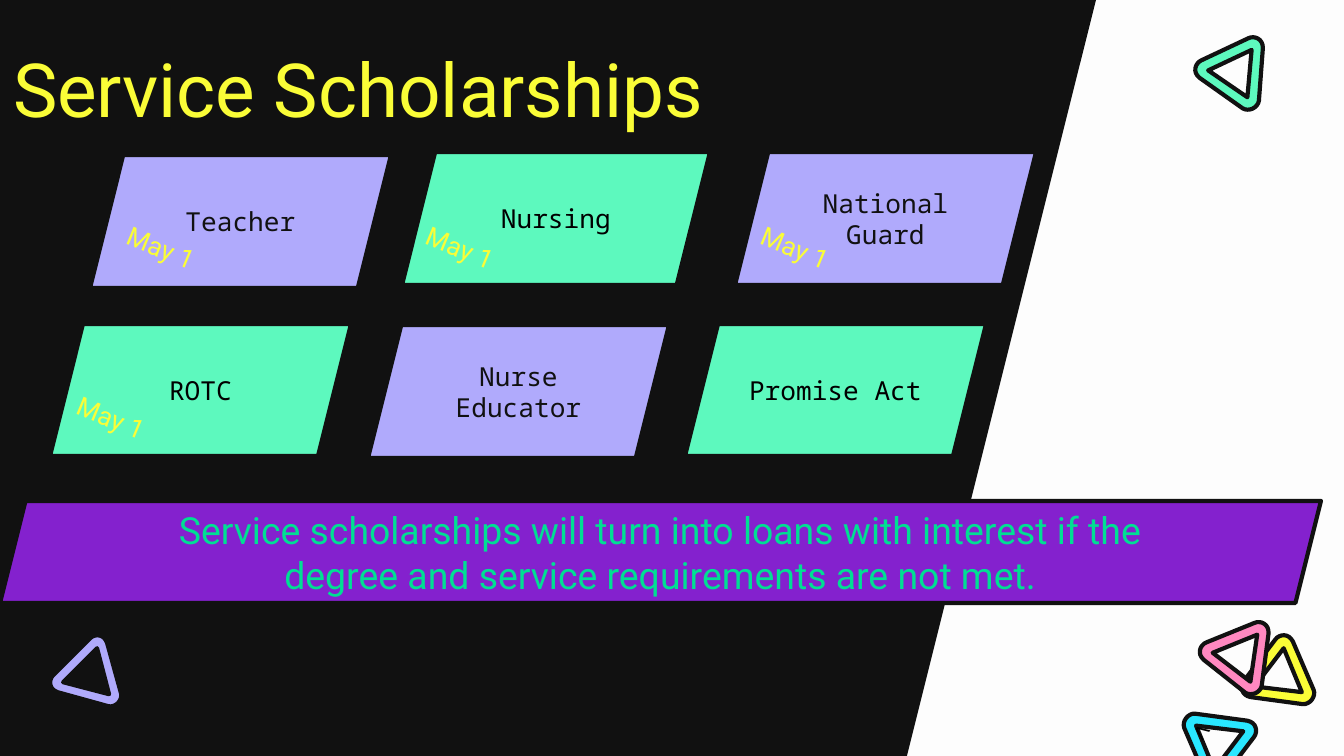
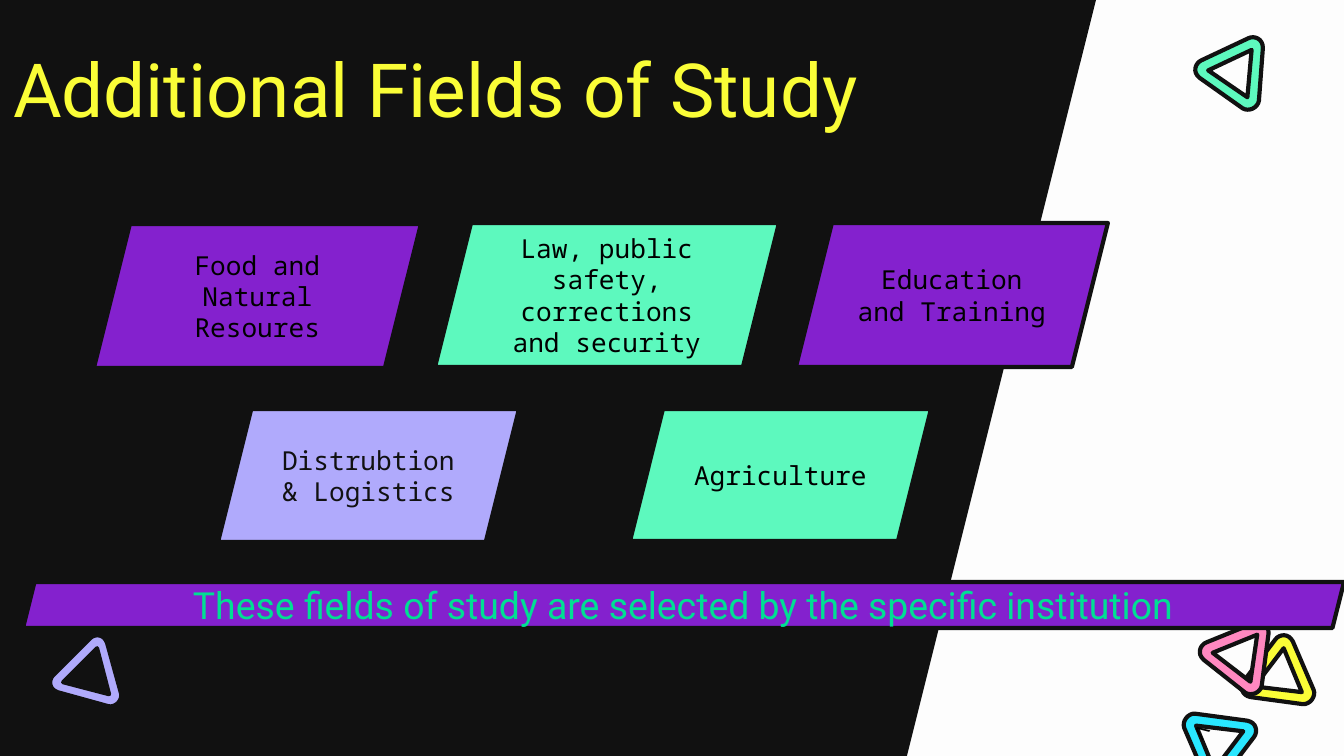
import dataclasses

import lxml.etree
import pptx
import pptx.dml.color
import pptx.enum.shapes
import pptx.enum.text
import pptx.oxml.ns
import pptx.presentation
import pptx.shapes.autoshape
import pptx.slide
import pptx.util

RGBColor = pptx.dml.color.RGBColor
Align = pptx.enum.text.PP_ALIGN
Anchor = pptx.enum.text.MSO_ANCHOR
Preset = pptx.enum.shapes.MSO_SHAPE
Point = tuple[float, float]

PX_PER_INCH = 134.4
WIDTH, HEIGHT = 1344, 756
INSET = 13
TITLE_ONLY = 5

WHITE = RGBColor(0xFD, 0xFD, 0xFD)
INK = RGBColor(0x11, 0x11, 0x11)
BLACK = RGBColor(0x00, 0x00, 0x00)
YELLOW = RGBColor(0xFA, 0xFD, 0x37)
MINT = RGBColor(0x5D, 0xF9, 0xBE)
LAVENDER = RGBColor(0xB0, 0xAA, 0xFC)
PURPLE = RGBColor(0x84, 0x21, 0xCE)
CYAN = RGBColor(0x29, 0xE7, 0xFF)
PINK = RGBColor(0xFF, 0x88, 0xC0)
GREEN = RGBColor(0x00, 0xDF, 0x93)

HEADING_FONT, CARD_FONT = "Roboto", "Noto Sans Mono"


@dataclasses.dataclass(frozen=True)
class Box:
    left: int
    top: int
    width: int
    height: int


@dataclasses.dataclass(frozen=True)
class Card:
    text: str
    box: Box
    fill: RGBColor


@dataclasses.dataclass(frozen=True)
class Triangle:
    center: tuple[int, int]
    rotation: float
    fill: RGBColor
    facing: int = 1
    text: str = ""


@dataclasses.dataclass(frozen=True)
class Page:
    title: str
    cards: list[Card]
    banner: Card
    deadlines: list[tuple[int, int]]


TITLE_BOX = Box(0, 46, 1470, 83)

TRIANGLES = [
    Triangle((1286, 680), 37.2, YELLOW),
    Triangle((1212, 738), 37.2, CYAN, facing=-1, text="<"),
    Triangle((1243, 663), 67.9, PINK),
    Triangle((1239, 79), 64.8, MINT),
    Triangle((95, 680), 45, LAVENDER),
]

# Rounded corners of a triangle pointing right, as cubic curves about its centre
CORNERS = [
    [(-33, 26), (-33, 33), (-26, 39), (-18, 35)],
    [(28, 9), (34, 5), (34, -5), (28, -9)],
    [(-18, -35), (-26, -39), (-33, -33), (-33, -26)],
]
HOLE = [(-21, -24), (20, 0), (-21, 24)]
CURVE_STEPS = 8

PAGES = [
    Page(
        "Service Scholarships",
        [
            Card("Teacher", Box(90, 155, 301, 133), LAVENDER),
            Card("Nursing", Box(402, 152, 308, 133), MINT),
            Card("National Guard", Box(735, 152, 301, 133), LAVENDER),
            Card("ROTC", Box(50, 324, 301, 132), MINT),
            Card("Nurse Educator", Box(368, 325, 301, 133), LAVENDER),
            Card("Promise Act", Box(685, 324, 301, 132), MINT),
        ],
        Card(
            "Service scholarships will turn into loans with interest if the "
            "degree and service requirements are not met.",
            Box(0, 501, 1321, 102),
            PURPLE,
        ),
        [(85, 224), (384, 224), (719, 224), (35, 394)],
    ),
    Page(
        "Additional Fields of Study",
        [
            Card("Food and Natural Resoures", Box(94, 224, 327, 144), PURPLE),
            Card("Law, public safety, corrections and security", Box(435, 223, 344, 144), MINT),
            Card("Education and Training", Box(796, 223, 312, 144), PURPLE),
            Card("Distrubtion & Logistics", Box(218, 409, 301, 133), LAVENDER),
            Card("Agriculture", Box(630, 409, 301, 132), MINT),
        ],
        Card(
            "These fields of study are selected by the specific institution",
            Box(23, 582, 1321, 46),
            PURPLE,
        ),
        [],
    ),
]


def px(length: float) -> pptx.util.Emu:
    return pptx.util.Emu(round(length * 914400 / PX_PER_INCH))


def bounds(box: Box) -> list[pptx.util.Emu]:
    return [px(length) for length in dataclasses.astuple(box)]


def paint(shape: pptx.shapes.autoshape.Shape, fill: RGBColor, outlined: bool = True) -> None:
    shape.shadow.inherit = False
    shape.fill.solid()
    shape.fill.fore_color.rgb = fill
    if outlined:
        shape.line.color.rgb = INK
        shape.line.width = pptx.util.Pt(2.25)
    else:
        shape.line.fill.background()


def write(
    shape: pptx.shapes.autoshape.Shape,
    text: str,
    size: int,
    font_name: str,
    color: RGBColor,
    align: Align = Align.CENTER,
) -> None:
    """Fill a shape with one vertically centred paragraph."""
    frame = shape.text_frame
    frame.text = text
    frame.word_wrap = True
    frame.auto_size = pptx.enum.text.MSO_AUTO_SIZE.NONE
    frame.vertical_anchor = Anchor.MIDDLE
    frame.margin_left = frame.margin_right = px(INSET)
    frame.margin_top = frame.margin_bottom = px(INSET)
    paragraph = frame.paragraphs[0]
    paragraph.alignment = align
    font = paragraph.runs[0].font
    font.size = pptx.util.Pt(size)
    font.name = font_name
    font.color.rgb = color


def curve_points(controls: list[Point]) -> list[Point]:
    points = []
    for step in range(CURVE_STEPS + 1):
        t = step / CURVE_STEPS
        weights = [(1 - t) ** 3, 3 * t * (1 - t) ** 2, 3 * t**2 * (1 - t), t**3]
        x, y = (sum(w * c[axis] for w, c in zip(weights, controls)) for axis in (0, 1))
        points.append((x, y))
    return points


def add_triangle(slide: pptx.slide.Slide, triangle: Triangle) -> pptx.shapes.autoshape.Shape:
    rim = [point for corner in CORNERS for point in curve_points(corner)]
    outer, inner = (
        [(px(triangle.facing * x), px(triangle.facing * y)) for x, y in outline]
        for outline in (rim, HOLE)
    )
    builder = slide.shapes.build_freeform(*outer[0], scale=1.0)
    builder.add_line_segments(outer[1:], close=True)
    builder.move_to(*inner[0])
    builder.add_line_segments(inner[1:], close=True)
    shape = builder.convert_to_shape(*(px(value) for value in triangle.center))
    shape.rotation = triangle.rotation
    paint(shape, triangle.fill)
    if triangle.text:
        write(shape, triangle.text, 14, "Arial", BLACK, Align.LEFT)
    return shape


def add_parallelogram(
    slide: pptx.slide.Slide, box: Box, fill: RGBColor, outlined: bool = True
) -> pptx.shapes.autoshape.Shape:
    shape = slide.shapes.add_shape(Preset.PARALLELOGRAM, *bounds(box))
    shape.adjustments[0] = 0.25
    paint(shape, fill, outlined)
    return shape


def decorate_layout(layout: pptx.slide.SlideLayout, slide: pptx.slide.Slide) -> None:
    """Draw the shared backdrop on a slide and move it to the layout."""
    layout.background.fill.solid()
    layout.background.fill.fore_color.rgb = WHITE
    for placeholder in list(layout.placeholders)[1:]:
        layout.shapes.element.remove(placeholder.element)
    slant = add_parallelogram(slide, Box(296, -4, 801, 769), INK, outlined=False)
    panel = slide.shapes.add_shape(Preset.RECTANGLE, *bounds(Box(-9, -4, 519, 770)))
    paint(panel, INK, outlined=False)
    triangles = [add_triangle(slide, triangle) for triangle in TRIANGLES]
    for shape in [slant, panel, *triangles]:
        layout.shapes.element.append(shape.element)


def add_title(slide: pptx.slide.Slide, text: str) -> None:
    title = slide.shapes.title
    title.left, title.top, title.width, title.height = bounds(TITLE_BOX)
    write(title, text, 40, HEADING_FONT, YELLOW, Align.LEFT)


def add_card(slide: pptx.slide.Slide, card: Card) -> None:
    shape = add_parallelogram(slide, card.box, card.fill)
    write(shape, card.text, 14, CARD_FONT, INK if card.fill == LAVENDER else BLACK)


def add_banner(slide: pptx.slide.Slide, banner: Card) -> None:
    shape = add_parallelogram(slide, banner.box, banner.fill)
    write(shape, banner.text, 20, HEADING_FONT, GREEN)


def add_deadline(slide: pptx.slide.Slide, left: int, top: int) -> None:
    """Add a tilted date with outlined letters."""
    label = slide.shapes.add_textbox(*bounds(Box(left, top, 141, 74)))
    label.rotation = 22.5
    write(label, "May 1", 14, HEADING_FONT, YELLOW)
    frame = label.text_frame
    frame.vertical_anchor = Anchor.TOP
    frame.margin_top = frame.margin_bottom = pptx.util.Inches(0.05)
    qn = pptx.oxml.ns.qn
    outline = lxml.etree.Element(qn("a:ln"), w=str(pptx.util.Pt(2.25)))
    fill = lxml.etree.SubElement(outline, qn("a:solidFill"))
    lxml.etree.SubElement(fill, qn("a:srgbClr"), val=str(INK))
    frame.paragraphs[0].runs[0].font._element.insert(0, outline)


def add_page(
    presentation: pptx.presentation.Presentation, layout: pptx.slide.SlideLayout, page: Page
) -> None:
    slide = presentation.slides.add_slide(layout)
    if len(presentation.slides) == 1:
        decorate_layout(layout, slide)
    add_title(slide, page.title)
    for card in page.cards:
        add_card(slide, card)
    add_banner(slide, page.banner)
    for left, top in page.deadlines:
        add_deadline(slide, left, top)


def main() -> None:
    presentation = pptx.Presentation()
    presentation.slide_width, presentation.slide_height = px(WIDTH), px(HEIGHT)
    layout = presentation.slide_layouts[TITLE_ONLY]
    for page in PAGES:
        add_page(presentation, layout, page)
    presentation.save("out.pptx")


if __name__ == "__main__":
    main()
